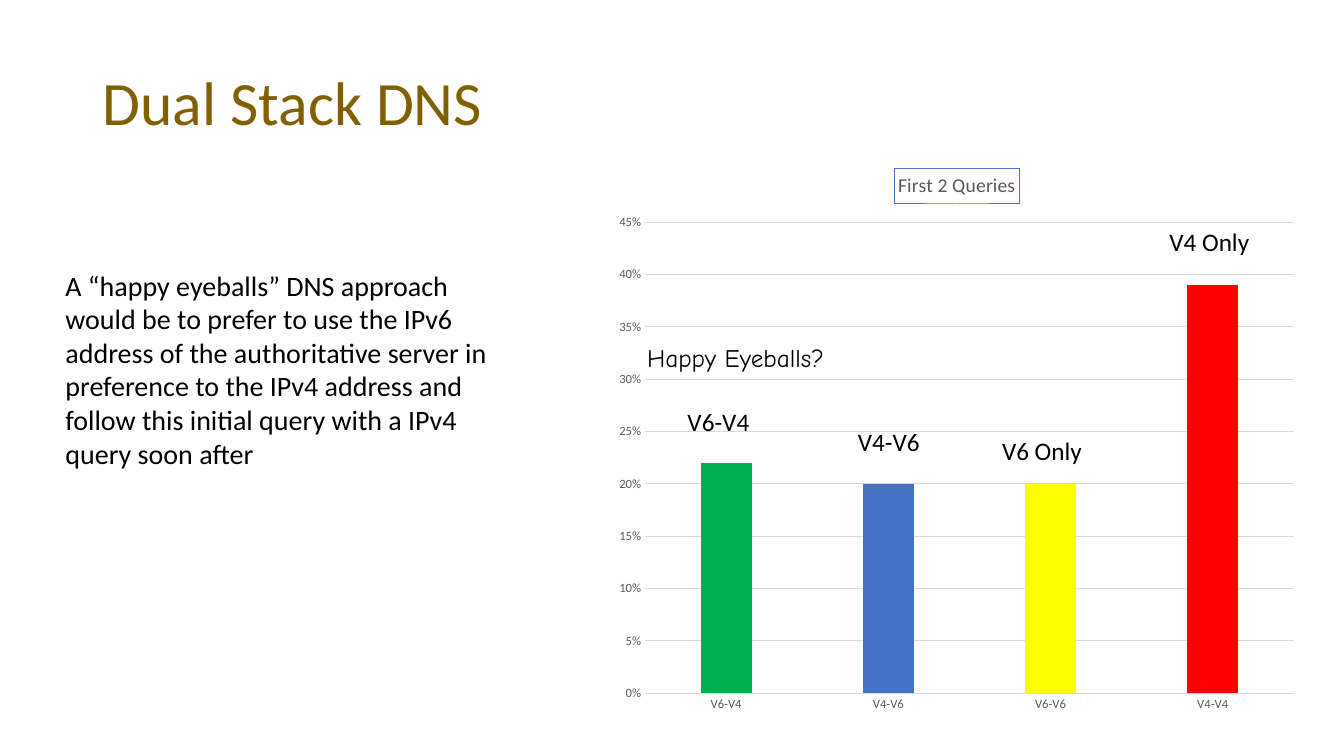
from lxml import etree
from pptx import Presentation
from pptx.chart.data import CategoryChartData
from pptx.dml.color import RGBColor
from pptx.enum import chart as ch, text as t
from pptx.oxml.ns import qn
from pptx.util import Inches, Pt

BLACK = RGBColor(0x00, 0x00, 0x00)
BROWN = RGBColor(0x80, 0x60, 0x00)
GREY = RGBColor(0x59, 0x59, 0x59)
PALE = RGBColor(0xD9, 0xD9, 0xD9)
BLUE = RGBColor(0x44, 0x72, 0xC4)
GREEN = RGBColor(0x00, 0xB0, 0x50)
YELLOW = RGBColor(0xFF, 0xFF, 0x00)
RED = RGBColor(0xFF, 0x00, 0x00)

TITLE = "Dual Stack DNS"
BODY = (
    "A “happy eyeballs” DNS approach would be to prefer to use the IPv6 "
    "address of the authoritative server in preference to the IPv4 address "
    "and follow this initial query with a IPv4 query soon after"
)
CHART_TITLE = "First 2 Queries"
BARS = [
    ("V6-V4", 0.22, GREEN),
    ("V4-V6", 0.20, BLUE),
    ("V6-V6", 0.20, YELLOW),
    ("V4-V4", 0.39, RED),
]
LABELS = [
    ("Happy Eyeballs?", 6.32, 3.35, 2.16, "Comic Neue"),
    ("V4 Only", 11.5, 2.2, 1, "Calibri"),
    ("V6 Only", 9.84, 4.27, 1, "Calibri"),
    ("V4-V6", 8.41, 4.18, 0.82, "Calibri"),
    ("V6-V4", 6.72, 3.98, 0.82, "Calibri"),
]
PLOT_AREA = {"x": 0.057, "y": 0.124, "w": 0.922, "h": 0.823}


def style_font(font, size, color, name="Calibri"):
    font.size = Pt(size)
    font.name = name
    font.bold = False
    font.color.rgb = color


def add_text(page, text, at, size=18, color=BLACK, name="Calibri",
             wrap=True, anchor=t.MSO_ANCHOR.TOP, spacing=None):
    box = page.shapes.add_textbox(*map(Inches, at))
    frame = box.text_frame
    frame.word_wrap = wrap
    frame.vertical_anchor = anchor
    para = frame.paragraphs[0]
    para.line_spacing = spacing
    span = para.add_run()
    span.text = text
    style_font(span.font, size, color, name)


def place_plot(chart):
    plot_area = chart.plots[0]._element.getparent()
    for old in plot_area.findall(qn("c:layout")):
        plot_area.remove(old)
    layout = etree.Element(qn("c:layout"))
    plot_area.insert(0, layout)
    manual = etree.SubElement(layout, qn("c:manualLayout"))
    settings = {"layoutTarget": "inner", "xMode": "edge", "yMode": "edge", **PLOT_AREA}
    for tag, value in settings.items():
        etree.SubElement(manual, qn("c:" + tag)).set("val", str(value))


def add_query_chart(page):
    data = CategoryChartData(number_format="0%")
    data.categories = [name for name, _, _ in BARS]
    data.add_series("Series 1", [value for _, value, _ in BARS])
    chart = page.shapes.add_chart(
        ch.XL_CHART_TYPE.COLUMN_CLUSTERED,
        Inches(6), Inches(1.5), Inches(6.98), Inches(5.68), data).chart
    style_font(chart.font, 10, BLACK)
    chart.has_legend = False

    chart.has_title = True
    title = chart.chart_title
    title.include_in_layout = False
    span = title.text_frame.paragraphs[0].add_run()
    span.text = CHART_TITLE
    style_font(span.font, 14, GREY)
    title.format.line.color.rgb = BLUE
    title.format.line.width = Pt(0.75)

    for axis in (chart.category_axis, chart.value_axis):
        axis.major_tick_mark = axis.minor_tick_mark = ch.XL_TICK_MARK.NONE
        style_font(axis.tick_labels.font, 9, GREY)
    values = chart.value_axis
    values.minimum_scale, values.maximum_scale, values.major_unit = 0, 0.45, 0.05
    values.tick_labels.number_format = "0%"
    values.tick_labels.number_format_is_linked = False
    values.format.line.fill.background()
    for line in (chart.category_axis.format.line, values.major_gridlines.format.line):
        line.color.rgb = PALE
        line.width = Pt(0.75)

    plot = chart.plots[0]
    plot.vary_by_categories = False
    plot.gap_width = 219
    plot.overlap = -27
    series = plot.series[0]
    series.format.fill.solid()
    series.format.fill.fore_color.rgb = BLUE
    for index, (_, _, color) in enumerate(BARS):
        fill = series.points[index].format.fill
        fill.solid()
        fill.fore_color.rgb = color
    place_plot(chart)


def main():
    deck = Presentation()
    deck.slide_width, deck.slide_height = Inches(13.33), Inches(7.5)
    page = deck.slides.add_slide(deck.slide_layouts[6])
    add_text(page, TITLE, (0.92, 0.32, 11.5, 1.45), size=44, color=BROWN,
             anchor=t.MSO_ANCHOR.MIDDLE, spacing=0.9)
    add_text(page, BODY, (0.55, 2.61, 4.71, 3.13), size=20)
    add_query_chart(page)
    for text, left, top, width, name in LABELS:
        add_text(page, text, (left, top, width, 0.4), name=name, wrap=False)
    deck.save("out.pptx")


if __name__ == "__main__":
    main()
